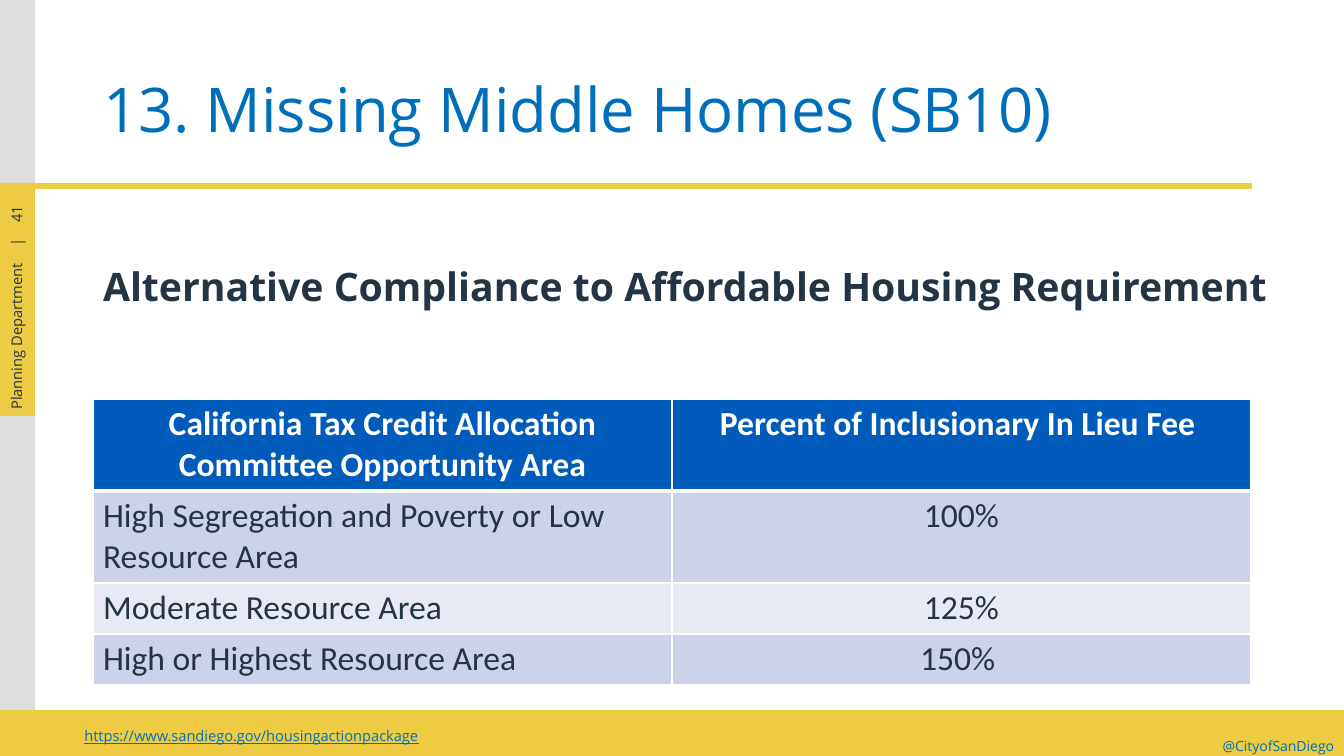
from dataclasses import dataclass

from lxml import etree
from pptx import Presentation
from pptx.dml.color import RGBColor
from pptx.enum.shapes import MSO_CONNECTOR, MSO_SHAPE
from pptx.enum.text import MSO_ANCHOR, MSO_AUTO_SIZE, PP_ALIGN
from pptx.oxml.ns import qn
from pptx.util import Emu, Pt

LEFT, CENTER, RIGHT = PP_ALIGN.LEFT, PP_ALIGN.CENTER, PP_ALIGN.RIGHT
TOP, MIDDLE = MSO_ANCHOR.TOP, MSO_ANCHOR.MIDDLE
RECTANGLE, STRAIGHT = MSO_SHAPE.RECTANGLE, MSO_CONNECTOR.STRAIGHT
NO_FIT = MSO_AUTO_SIZE.NONE
EMU_PER_PX = 914400 / 100.8
EMU_PER_POINT = 12700


@dataclass(frozen=True)
class Theme:
    gold: str = "EDCC43"
    grey: str = "D9D9D9"
    blue: str = "006FBA"
    ink: str = "243444"
    white: str = "FFFFFF"
    header: str = "005BBB"
    bands: tuple = ("CCD2E7", "E7EAF3")
    font: str = "Open Sans"
    table_font: str = "Calibri"
    title_size: float = 44
    heading_size: float = 28
    table_size: float = 24
    small_size: float = 10.5
    handle_size: float = 10


def px(length):
    return Emu(round(length * EMU_PER_PX))


def rgb(colour):
    return RGBColor.from_string(colour)


class SlideBuilder:
    def __init__(self, page, theme):
        self.page = page
        self.theme = theme

    def span(self, para, text, size, colour, font=None, bold=False, underline=False):
        span = para.add_run()
        span.text = text
        span.font.name = font or self.theme.font
        span.font.size = Pt(size)
        span.font.color.rgb = rgb(colour)
        span.font.bold = bold
        span.font.underline = underline

    def bar(self, left, top, width, height, colour, opacity=100):
        bar = self.page.shapes.add_shape(RECTANGLE, *map(px, (left, top, width, height)))
        bar.shadow.inherit = False
        bar.fill.solid()
        bar.fill.fore_color.rgb = rgb(colour)
        bar.line.fill.background()
        if opacity < 100:
            fill_colour = bar.fill._xPr.find(qn("a:solidFill"))[0]
            etree.SubElement(fill_colour, qn("a:alpha"), val=str(opacity * 1000))

    def rule(self, left, right, y, colour, weight):
        rule = self.page.shapes.add_connector(STRAIGHT, px(left), px(y), px(right), px(y))
        rule.line.color.rgb = rgb(colour)
        rule.line.width = Pt(weight)
        etree.SubElement(rule._element.spPr, qn("a:effectLst"))

    def label(self, bounds, text, size, colour, align=LEFT, anchor=TOP,
              rotation=0, tab=None, underline=False):
        box = self.page.shapes.add_textbox(*map(px, bounds))
        box.rotation = rotation
        frame = box.text_frame
        frame.word_wrap = True
        frame.vertical_anchor = anchor
        para = frame.paragraphs[0]
        para.alignment = align
        if tab:
            tabs = etree.SubElement(para._p.get_or_add_pPr(), qn("a:tabLst"))
            etree.SubElement(tabs, qn("a:tab"), pos=str(px(tab)), algn="l")
        self.span(para, text, size, colour, underline=underline)

    def placeholder(self, box, bounds, text, size, colour, anchor, bold=False):
        box.left, box.top, box.width, box.height = map(px, bounds)
        frame = box.text_frame
        frame.word_wrap = True
        frame.auto_size = NO_FIT
        frame.vertical_anchor = anchor
        para = frame.paragraphs[0]
        properties = para._p.get_or_add_pPr()
        properties.set("marL", "0")
        properties.set("indent", "0")
        etree.SubElement(properties, qn("a:buNone"))
        para.alignment = LEFT
        para.line_spacing = 0.9
        para.space_before = Pt(0)
        self.span(para, text, size, colour, bold=bold)

    def cell_borders(self, cell, weights):
        properties = cell._tc.get_or_add_tcPr()
        for position, (side, weight) in enumerate(weights.items()):
            line = etree.Element(qn(f"a:ln{side}"), w=str(weight * EMU_PER_POINT))
            fill = etree.SubElement(line, qn("a:solidFill"))
            etree.SubElement(fill, qn("a:srgbClr"), val=self.theme.white)
            properties.insert(position, line)

    def table(self, left, top, column_width, row_heights, rows):
        theme = self.theme
        columns = len(rows[0])
        table = self.page.shapes.add_table(
            len(rows), columns, px(left), px(top),
            px(column_width * columns), px(sum(row_heights))).table
        for column in table.columns:
            column.width = px(column_width)
        for r, (height, texts) in enumerate(zip(row_heights, rows)):
            table.rows[r].height = px(height)
            is_header = r == 0
            for c, text in enumerate(texts):
                cell = table.cell(r, c)
                cell.fill.solid()
                cell.fill.fore_color.rgb = rgb(
                    theme.header if is_header else theme.bands[(r - 1) % 2])
                self.cell_borders(cell, {"L": 1, "R": 1, "T": 3 if r == 1 else 1,
                                         "B": 3 if is_header else 1})
                para = cell.text_frame.paragraphs[0]
                para.alignment = CENTER if is_header or c else LEFT
                self.span(para, text, theme.table_size,
                          theme.white if is_header else theme.ink,
                          theme.table_font, bold=is_header)


def main():
    deck = Presentation()
    deck.slide_width, deck.slide_height = px(1344), px(756)
    page = deck.slides.add_slide(deck.slide_layouts[1])
    theme = Theme()
    slide = SlideBuilder(page, theme)

    # Footer
    slide.bar(0, 710, 1344, 46, theme.gold)
    slide.label((1176, 733, 168, 27), "@CityofSanDiego",
                theme.handle_size, theme.blue, RIGHT)
    slide.label((24, 715, 455, 41), "https://www.sandiego.gov/housingactionpackage",
                theme.small_size, theme.blue, CENTER, MIDDLE, underline=True)

    # Side strip with department and page number
    slide.bar(0, 0, 35, 710, theme.grey, opacity=85)
    slide.rule(0, 1252, 186, theme.gold, 4.5)
    slide.bar(0, 183, 35, 233, theme.gold)
    slide.label((-6, 199, 45, 30), "41", theme.small_size, theme.ink,
                CENTER, MIDDLE, rotation=270)
    slide.label((-82, 307, 197, 28), "Planning Department\t|", theme.small_size,
                theme.ink, rotation=270, tab=163)

    # Title and heading
    slide.placeholder(page.shapes.title, (93, 40, 1159, 146),
                      "13. Missing Middle Homes (SB10)",
                      theme.title_size, theme.blue, MIDDLE)
    slide.placeholder(page.placeholders[1], (93, 263, 1209, 60),
                      "Alternative Compliance to Affordable Housing Requirement",
                      theme.heading_size, theme.ink, TOP, bold=True)

    # Fee table
    slide.table(93, 399, 579, (92, 92, 51, 51), (
        ("California Tax Credit Allocation Committee Opportunity Area",
         "Percent of Inclusionary In Lieu Fee "),
        ("High Segregation and Poverty or Low Resource Area", "100%"),
        ("Moderate Resource Area", "125%"),
        ("High or Highest Resource Area", "150% "),
    ))

    deck.save("out.pptx")


if __name__ == "__main__":
    main()
